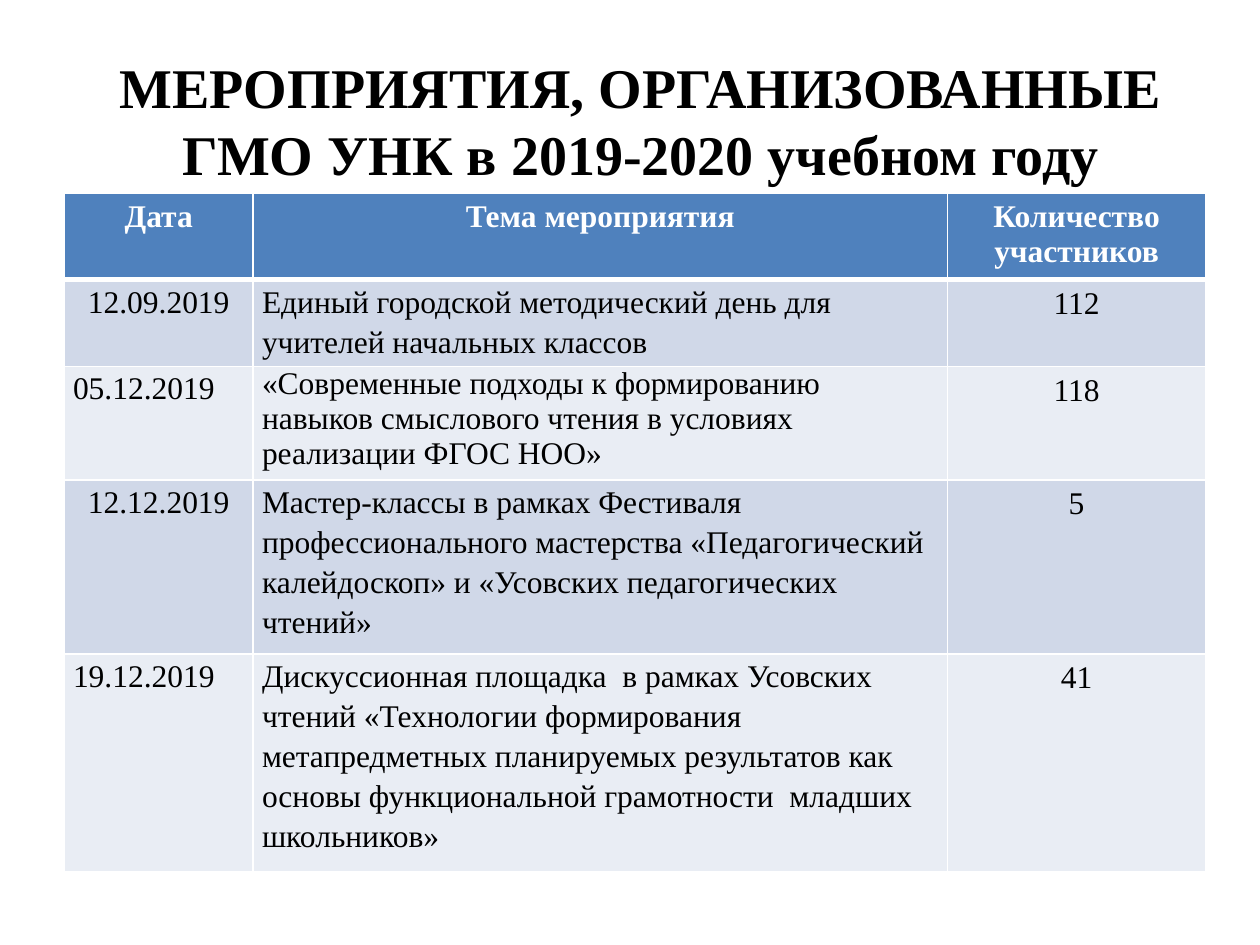
from lxml import etree
from pptx import Presentation
from pptx.dml.color import RGBColor
from pptx.enum.text import MSO_ANCHOR, PP_ALIGN
from pptx.oxml.ns import qn
from pptx.util import Inches, Pt

CENTER, LEFT = PP_ALIGN.CENTER, PP_ALIGN.LEFT
MIDDLE = MSO_ANCHOR.MIDDLE

FONT = "Times New Roman"
BLACK = RGBColor(0x00, 0x00, 0x00)
WHITE = RGBColor(0xFF, 0xFF, 0xFF)
HEADER_BLUE = RGBColor(0x4F, 0x81, 0xBD)
BANDS = (RGBColor(0xD0, 0xD8, 0xE8), RGBColor(0xE9, 0xED, 0xF4))

TITLE = "МЕРОПРИЯТИЯ, ОРГАНИЗОВАННЫЕ ГМО УНК в 2019-2020 учебном году"
HEADERS = ("Дата", "Тема мероприятия", "Количество участников")
# Date, its alignment, topic, line spacing of the topic, participants
EVENTS = (
    ("12.09.2019", CENTER,
     "Единый городской методический день для учителей начальных классов",
     1.15, "112"),
    ("05.12.2019", LEFT,
     "«Современные подходы к формированию навыков смыслового чтения "
     "в условиях реализации ФГОС НОО»",
     1.0, "118"),
    ("12.12.2019", CENTER,
     "Мастер-классы в рамках Фестиваля профессионального мастерства "
     "«Педагогический калейдоскоп» и «Усовских педагогических чтений»",
     1.15, "5"),
    ("19.12.2019", LEFT,
     "Дискуссионная площадка  в рамках Усовских чтений «Технологии "
     "формирования метапредметных планируемых результатов как основы "
     "функциональной грамотности  младших школьников»",
     1.15, "41"),
)
COLUMN_WIDTHS = (1.5, 5.51, 2.05)
ROW_HEIGHTS = (0.69, 0.69, 0.9, 1.38, 1.73)


def format_text(text_frame, size, color, bold, alignment, spacing=None):
    for paragraph in text_frame.paragraphs:
        paragraph.alignment = alignment
        paragraph.line_spacing = spacing
        for run in paragraph.runs:
            run.font.name = FONT
            run.font.size = Pt(size)
            run.font.bold = bold
            run.font.color.rgb = color


def set_borders(cell, bottom_width):
    """Draw white cell borders; must run before the cell gets its fill."""
    properties = cell._tc.get_or_add_tcPr()
    widths = {"a:lnL": 1, "a:lnR": 1, "a:lnT": 1, "a:lnB": bottom_width}
    for tag, width in widths.items():
        line = etree.SubElement(properties, qn(tag), w=str(Pt(width)))
        fill = etree.SubElement(line, qn("a:solidFill"))
        etree.SubElement(fill, qn("a:srgbClr"), val=str(WHITE))


def fill_cell(cell, text, fill, alignment, color=BLACK, bold=False,
              spacing=None, bottom_width=1):
    cell.text_frame.text = text
    format_text(cell.text_frame, 18, color, bold, alignment, spacing)
    set_borders(cell, bottom_width)
    cell.fill.solid()
    cell.fill.fore_color.rgb = fill


def tighten_margins(cell):
    cell.margin_left = cell.margin_right = Inches(0.07)
    cell.margin_top = cell.margin_bottom = 0


def add_title(slide):
    title = slide.shapes.title
    title.left, title.top = Inches(0.61), Inches(0.36)
    title.width, title.height = Inches(8.95), Inches(1.18)
    title.text_frame.text = TITLE
    title.text_frame.word_wrap = True
    title.text_frame.vertical_anchor = MIDDLE
    format_text(title.text_frame, 32, BLACK, True, CENTER)


def add_events_table(slide):
    table = slide.shapes.add_table(
        len(ROW_HEIGHTS), len(COLUMN_WIDTHS), Inches(0.51), Inches(1.53),
        Inches(sum(COLUMN_WIDTHS)), Inches(sum(ROW_HEIGHTS))).table
    for column, width in zip(table.columns, COLUMN_WIDTHS):
        column.width = Inches(width)
    for row, height in zip(table.rows, ROW_HEIGHTS):
        row.height = Inches(height)

    for index, header in enumerate(HEADERS):
        fill_cell(table.cell(0, index), header, HEADER_BLUE, CENTER,
                  WHITE, bold=True, bottom_width=3)
    for index, event in enumerate(EVENTS):
        date, date_alignment, topic, topic_spacing, participants = event
        band = BANDS[index % 2]
        date_cell, topic_cell, count_cell = table.rows[index + 1].cells
        fill_cell(date_cell, date, band, date_alignment, spacing=1.15)
        fill_cell(topic_cell, topic, band, LEFT, spacing=topic_spacing)
        fill_cell(count_cell, participants, band, CENTER)
        tighten_margins(date_cell)
        tighten_margins(topic_cell)


def main():
    presentation = Presentation()
    presentation.slide_width = Inches(10)
    presentation.slide_height = Inches(7.5)
    title_only = presentation.slide_layouts[5]
    slide = presentation.slides.add_slide(title_only)
    add_title(slide)
    add_events_table(slide)
    presentation.save("out.pptx")


if __name__ == "__main__":
    main()
